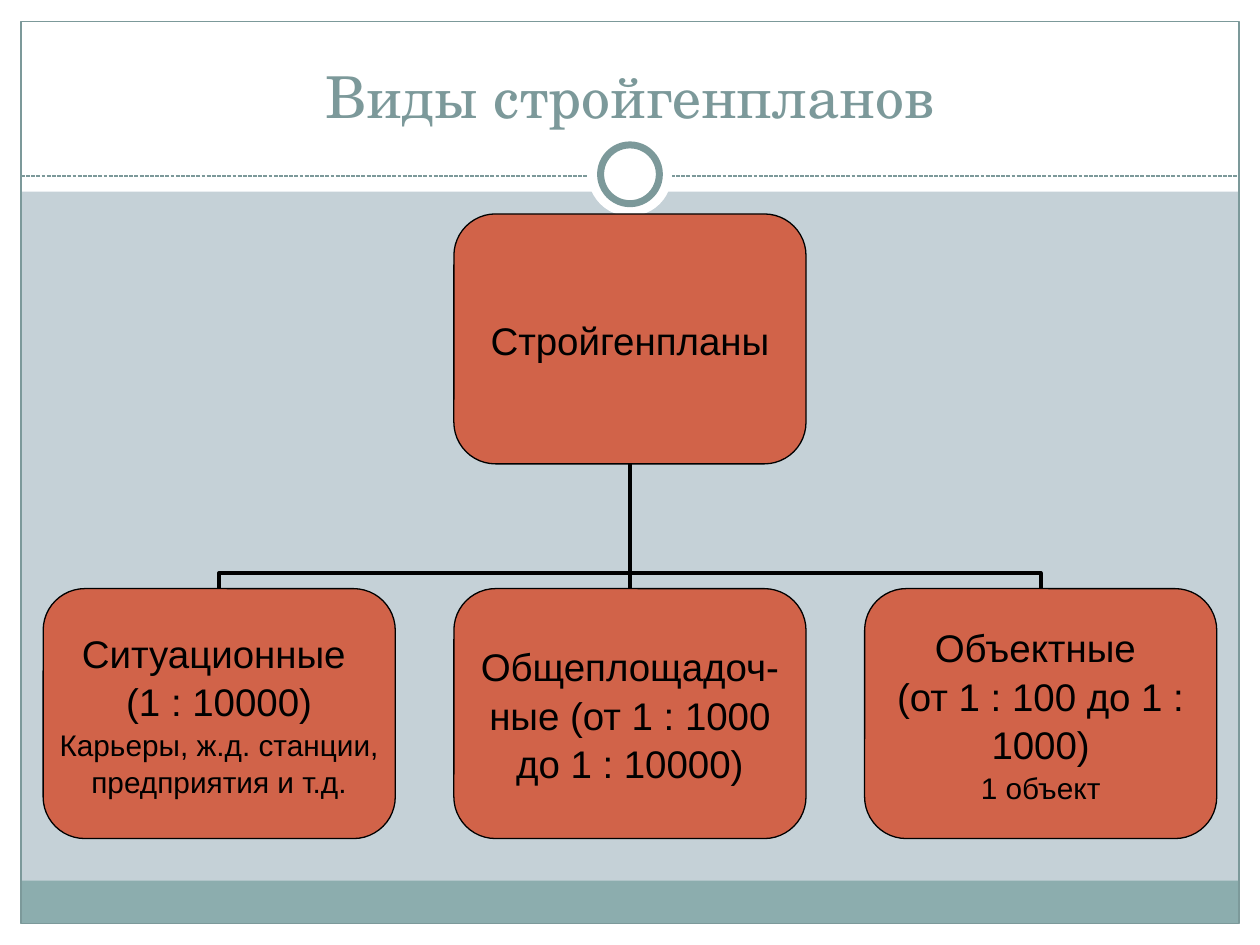
from lxml import etree
from pptx import Presentation
from pptx.dml.color import RGBColor
from pptx.enum import dml, shapes, text
from pptx.oxml import ns
from pptx.util import Pt

COLORS = {
    "background": "C5D1D7", "frame": "FFFFFF", "accent": "7C999A",
    "footer": "8CADAE", "box": "D16349", "black": "000000",
}
SHAPE = shapes.MSO_SHAPE
CONNECTOR = shapes.MSO_CONNECTOR


def rgb(name):
    return RGBColor.from_string(COLORS[name])


def add_text(tf, lines, font="Arial", color="black", spacing=1.0,
             anchor=text.MSO_ANCHOR.MIDDLE, wrap=True, margin=0):
    """Fill a text frame with centred paragraphs, given as (text, size) pairs."""
    tf.word_wrap = wrap
    tf.auto_size = text.MSO_AUTO_SIZE.NONE
    tf.vertical_anchor = anchor
    tf.margin_left = tf.margin_right = tf.margin_top = tf.margin_bottom = Pt(margin)
    for i, (line, size) in enumerate(lines):
        p = tf.paragraphs[0] if i == 0 else tf.add_paragraph()
        p.alignment = text.PP_ALIGN.CENTER
        p.line_spacing = spacing
        r = p.add_run()
        r.text = line
        r.font.name = font
        r.font.size = Pt(size)
        r.font.color.rgb = rgb(color)


prs = Presentation()
prs.slide_width, prs.slide_height = Pt(720), Pt(540)
s = prs.slides.add_slide(prs.slide_layouts[5])
s.background.fill.solid()
s.background.fill.fore_color.rgb = rgb("background")

# Frame, footer band and ring: kind, position, fill, line width
decorations = [
    (SHAPE.RECTANGLE, (0, 528, 720, 12), "frame", None),
    (SHAPE.RECTANGLE, (0, 0, 720, 109.5), "frame", None),
    (SHAPE.RECTANGLE, (0, 0, 12, 540), "frame", None),
    (SHAPE.RECTANGLE, (708, 0, 12, 540), "frame", None),
    (SHAPE.RECTANGLE, (12, 503.3, 696, 24.5), "footer", None),
    (SHAPE.RECTANGLE, (12, 12.2, 696, 515.6), None, 0.75),
    (SHAPE.OVAL, (336, 75.6, 48, 48), "frame", None),
    (SHAPE.OVAL, (343.2, 82.8, 33.6, 33.6), "frame", 4),
]
for kind, position, fill, line_width in decorations:
    sp = s.shapes.add_shape(kind, *map(Pt, position))
    sp.shadow.inherit = False
    if fill:
        sp.fill.solid()
        sp.fill.fore_color.rgb = rgb(fill)
    else:
        sp.fill.background()
    if line_width:
        sp.line.color.rgb = rgb("accent")
        sp.line.width = Pt(line_width)
    else:
        sp.line.fill.background()
ring_back = s.shapes[-2]

divider = s.shapes.add_connector(CONNECTOR.STRAIGHT, Pt(12), Pt(100.6), Pt(708), Pt(100.6))
divider.line.color.rgb = rgb("accent")
divider.line.width = Pt(0.75)
divider.line.dash_style = dml.MSO_LINE.SQUARE_DOT
ring_back.element.addprevious(divider.element)

title = s.shapes.title
title.left, title.top, title.width, title.height = Pt(24), Pt(18), Pt(672), Pt(60)
add_text(title.text_frame, [("Виды стройгенпланов", 33)], font="TeX Gyre Schola",
         color="accent", anchor=text.MSO_ANCHOR.BOTTOM, margin=3.6)
divider.element.addprevious(title.element)

# Organisation chart
CENTER, PITCH = 360, 234.7
BOX_W, BOX_H = 201.2, 142.8
ROOT_TOP, CHILD_TOP = 122.3, 336.4
ROOT_BOTTOM = ROOT_TOP + BOX_H
GAP = CHILD_TOP - ROOT_BOTTOM
MIDDLE_Y = ROOT_BOTTOM + GAP / 2

links = [s.shapes.add_connector(CONNECTOR.STRAIGHT, Pt(CENTER), Pt(CHILD_TOP),
                                Pt(CENTER), Pt(ROOT_BOTTOM))]
for side, angle in ((-1, 270), (1, 90)):
    # An elbow that starts vertically is a horizontal one turned about its centre
    middle_x = CENTER + side * PITCH / 2
    link = s.shapes.add_connector(
        CONNECTOR.ELBOW, Pt(middle_x - GAP / 2), Pt(MIDDLE_Y - PITCH / 2),
        Pt(middle_x + GAP / 2), Pt(MIDDLE_Y + PITCH / 2))
    xfrm = link.element.spPr.find(ns.qn("a:xfrm"))
    xfrm.set("rot", str(angle * 60000))
    if side == 1:
        xfrm.set("flipH", "1")
    adjustments = link.element.spPr.find(ns.qn("a:prstGeom")).find(ns.qn("a:avLst"))
    etree.SubElement(adjustments, ns.qn("a:gd"), name="adj1", fmla="val 12600")
    links.append(link)
for link in links:
    link.line.color.rgb = rgb("black")
    link.line.width = Pt(2.25)
for line in [divider] + links:
    etree.SubElement(line.element.spPr, ns.qn("a:effectLst"))

boxes = [
    (0, ROOT_TOP, [("Стройгенпланы", 22)]),
    (-1, CHILD_TOP, [("Ситуационные ", 22), ("(1 : 10000)", 22),
                     ("Карьеры, ж.д. станции, предприятия и т.д.", 17)]),
    (0, CHILD_TOP, [("Общеплощадоч-ные (от 1 : 1000 до 1 : 10000)", 22)]),
    (1, CHILD_TOP, [("Объектные ", 22), ("(от 1 : 100 до 1 : 1000)", 22),
                    ("1 объект", 17)]),
]
for column, top, lines in boxes:
    left = CENTER + column * PITCH - BOX_W / 2
    sp = s.shapes.add_shape(SHAPE.ROUNDED_RECTANGLE, Pt(left), Pt(top), Pt(BOX_W), Pt(BOX_H))
    sp.shadow.inherit = False
    sp.fill.solid()
    sp.fill.fore_color.rgb = rgb("box")
    sp.line.color.rgb = rgb("black")
    sp.line.width = Pt(0.75)
    add_text(sp.text_frame, lines, spacing=1.05, wrap=top != ROOT_TOP)

prs.save("out.pptx")
